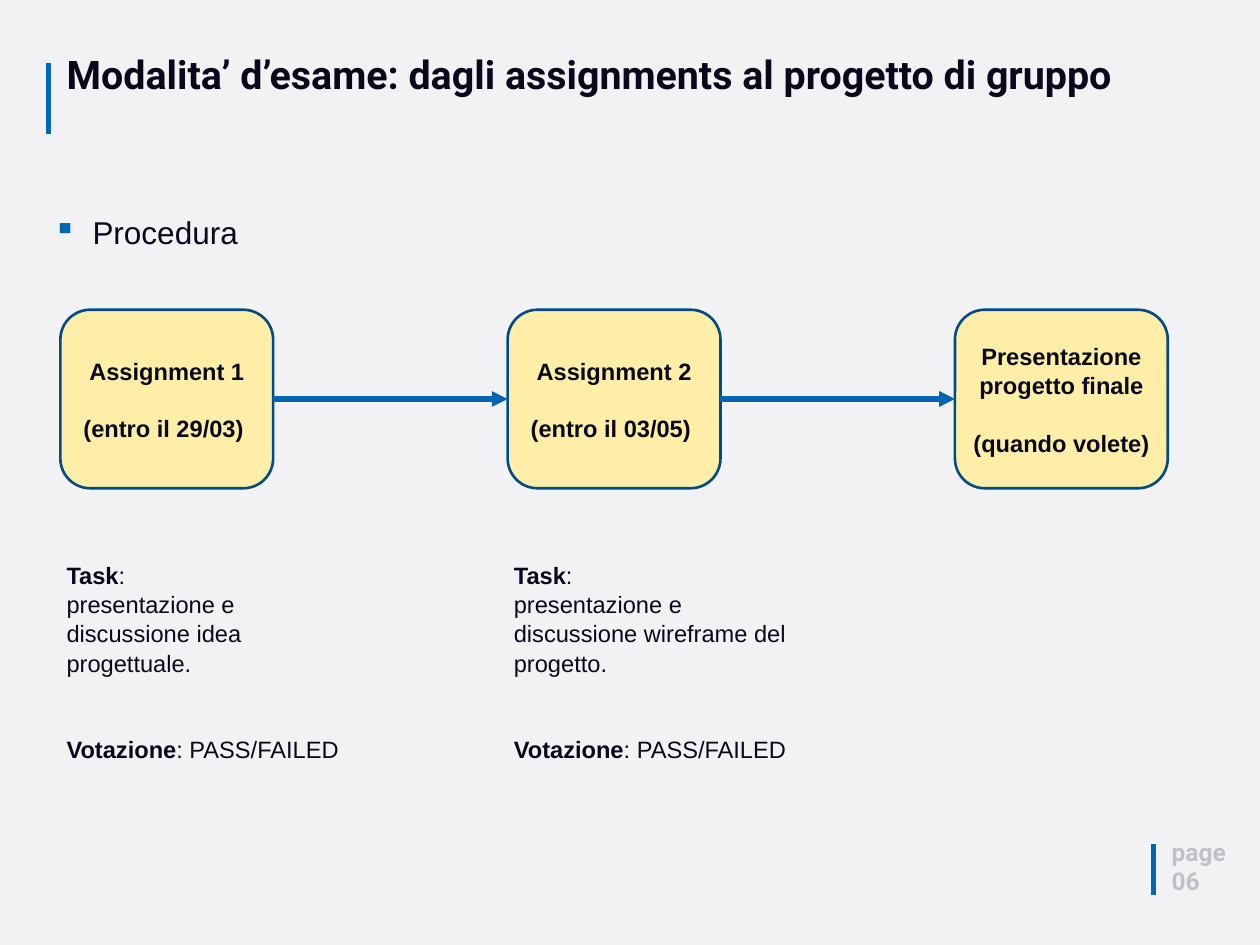
from lxml import etree
from pptx import Presentation
from pptx.dml.color import RGBColor
from pptx.enum.shapes import MSO_CONNECTOR, MSO_SHAPE
from pptx.enum.text import MSO_ANCHOR, MSO_AUTO_SIZE, PP_ALIGN
from pptx.oxml.ns import qn
from pptx.util import Pt

STRAIGHT = MSO_CONNECTOR.STRAIGHT
ROUNDED = MSO_SHAPE.ROUNDED_RECTANGLE
TOP, MIDDLE = MSO_ANCHOR.TOP, MSO_ANCHOR.MIDDLE
LEFT, CENTER = PP_ALIGN.LEFT, PP_ALIGN.CENTER
NO_FIT = MSO_AUTO_SIZE.NONE
LEFT_SITE, RIGHT_SITE = 1, 3

COLORS = {
    "background": "F2F2F5",
    "accent": "0066B2",
    "ink": "0A091B",
    "muted": "C0C0C8",
    "step": "FFEEA7",
    "step_edge": "004B84",
}
TITLE_FONT = {"name": "Roboto", "size": Pt(45), "bold": True}
PAGE_FONT = {"name": "Roboto", "size": Pt(28), "bold": True}
BULLET_FONT = {"name": "Arial", "size": Pt(36), "bold": False}
BODY_FONT = {"name": "Arial", "size": Pt(27), "bold": False}
STRONG_FONT = {**BODY_FONT, "bold": True}
LINE_PITCH = 32.3

STEPS = [
    ("Assignment 1", "(entro il 29/03) ", "presentazione e discussione idea progettuale."),
    ("Assignment 2", "(entro il 03/05) ", "presentazione e discussione wireframe del progetto."),
    ("Presentazione progetto finale", "(quando volete)", None),
]
STEP_STRIDE = 511.2


def color(key):
    return RGBColor.from_string(COLORS[key])


def apply(target, values):
    for attribute, value in values.items():
        setattr(target, attribute, value)


def write(paragraph, runs, ink="ink", **layout):
    apply(paragraph, layout)
    for words, font in runs:
        run = paragraph.add_run()
        run.text = words
        apply(run.font, font)
        run.font.color.rgb = color(ink)


def text_frame(slide, box):
    frame = slide.shapes.add_textbox(*map(Pt, box)).text_frame
    apply(frame, {"word_wrap": True, "vertical_anchor": TOP})
    return frame


def add_line(slide, start, end, width):
    line = slide.shapes.add_connector(STRAIGHT, *map(Pt, start + end))
    line.line.color.rgb = color("accent")
    line.line.width = Pt(width)
    etree.SubElement(line._element.spPr, qn("a:effectLst"))
    return line


def add_title(slide, box):
    left, top, width, height = box
    add_line(slide, (left - 13.7, top + 12), (left - 13.7, top + 93.4), 5)
    title = slide.shapes.title
    apply(title, dict(zip(("left", "top", "width", "height"), map(Pt, box))))
    frame = title.text_frame
    apply(frame, {"word_wrap": True, "vertical_anchor": TOP, "auto_size": NO_FIT})
    write(frame.paragraphs[0],
          [("Modalita’ d’esame: dagli assignments al progetto di gruppo", TITLE_FONT)],
          alignment=LEFT, line_spacing=0.9)


def add_page_number(slide, box):
    left, top, width, height = box
    add_line(slide, (left - 13.7, top + 12), (left - 13.7, top + 70.5), 5)
    frame = text_frame(slide, box)
    write(frame.paragraphs[0], [("page", PAGE_FONT)], "muted")
    write(frame.add_paragraph(), [("06", PAGE_FONT)], "muted")


def add_bullet(slide, box):
    procedure = text_frame(slide, box).paragraphs[0]
    write(procedure, [("Procedura", BULLET_FONT)])
    properties = procedure._p.get_or_add_pPr()
    properties.set("marL", str(Pt(44.64)))
    properties.set("indent", str(-Pt(44.64)))
    bullet_color = etree.SubElement(properties, qn("a:buClr"))
    etree.SubElement(bullet_color, qn("a:srgbClr"), val=COLORS["accent"])
    etree.SubElement(properties, qn("a:buChar"), char="▪")


def add_step(slide, box, name, deadline):
    step = slide.shapes.add_shape(ROUNDED, *map(Pt, box))
    step.shadow.inherit = False
    step.fill.solid()
    step.fill.fore_color.rgb = color("step")
    step.line.color.rgb = color("step_edge")
    step.line.width = Pt(3)
    frame = step.text_frame
    apply(frame, {"word_wrap": True, "vertical_anchor": MIDDLE})
    spacing = {"alignment": CENTER, "line_spacing": 1.04}
    write(frame.paragraphs[0], [(name, STRONG_FONT)], **spacing)
    write(frame.add_paragraph(), [(deadline, STRONG_FONT)],
          space_before=Pt(LINE_PITCH), **spacing)
    return step


def add_task(slide, box, task):
    frame = text_frame(slide, box)
    spacing = {"line_spacing": 1.04}
    write(frame.paragraphs[0], [("Task", STRONG_FONT), (":", BODY_FONT)], **spacing)
    write(frame.add_paragraph(), [(task, BODY_FONT)], **spacing)
    write(frame.add_paragraph(),
          [("Votazione", STRONG_FONT), (": PASS/FAILED", BODY_FONT)],
          space_before=Pt(2 * LINE_PITCH), **spacing)


def add_arrow(slide, source, target):
    arrow = add_line(slide, (0, 0), (0, 0), 6)
    arrow.begin_connect(source, RIGHT_SITE)
    arrow.end_connect(target, LEFT_SITE)
    etree.SubElement(arrow.line._get_or_add_ln(), qn("a:tailEnd"), type="triangle")


def add_process(slide, box):
    left, top, width, height = box
    steps = []
    for index, (name, deadline, task) in enumerate(STEPS):
        x = left + index * STEP_STRIDE
        steps.append(add_step(slide, (x, top, 243.2, 204), name, deadline))
        if task:
            add_task(slide, (x, top + 281.6, 327, height - 281.6), task)
    for source, target in zip(steps, steps[1:]):
        add_arrow(slide, source, target)


def main():
    deck = Presentation()
    deck.slide_width, deck.slide_height = Pt(1440), Pt(1080)
    slide = deck.slides.add_slide(deck.slide_layouts[5])
    slide.background.fill.solid()
    slide.background.fill.fore_color.rgb = color("background")
    add_title(slide, (69, 60, 1304.6, 56))
    add_page_number(slide, (1332, 952.8, 108, 75))
    add_bullet(slide, (54, 240, 1386, 51))
    add_process(slide, (69, 354, 1265.6, 517.8))
    deck.save("out.pptx")


if __name__ == "__main__":
    main()
